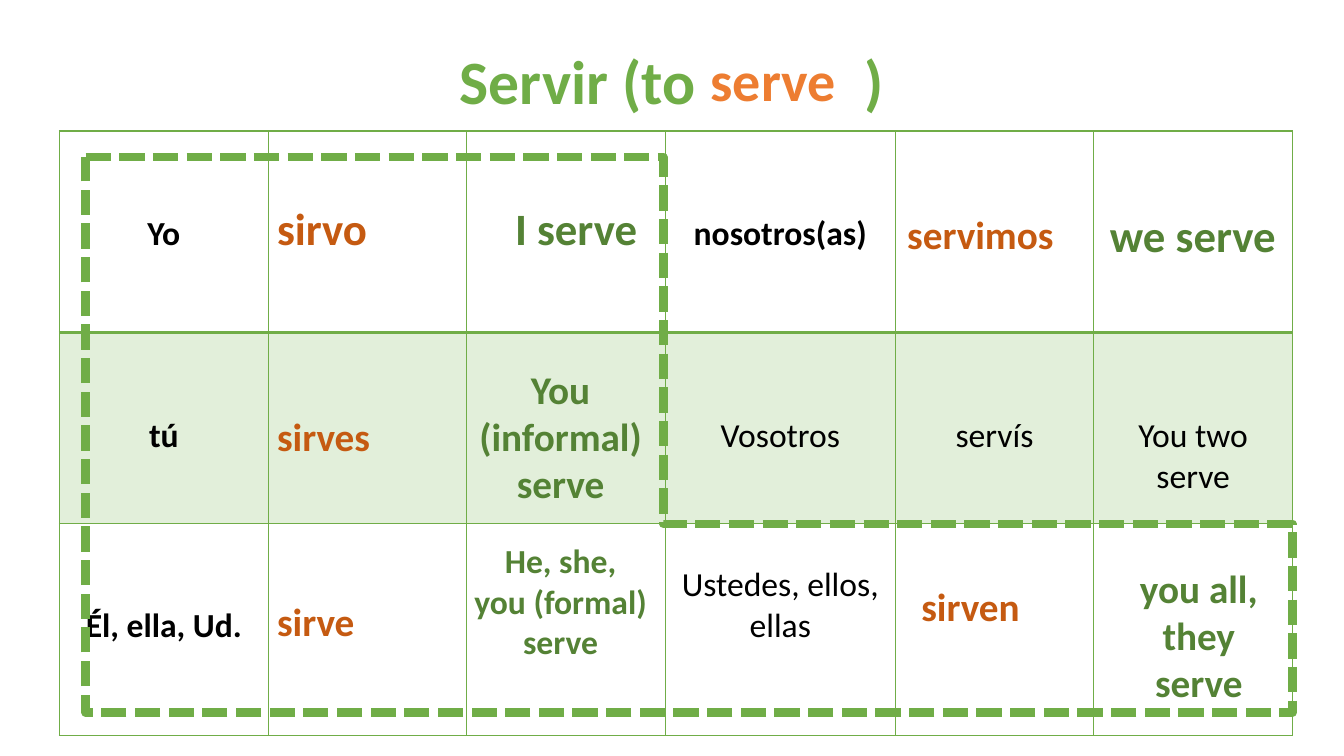
from lxml import etree
from pptx import Presentation
from pptx import util as u
from pptx.dml.color import RGBColor
from pptx.enum import dml, shapes, text
from pptx.oxml.ns import qn

PX = 9144  # EMU, 100 px to the inch
FONT = "Calibri"
GREEN = RGBColor(0x70, 0xAD, 0x47)
PALE = RGBColor(0xE2, 0xEF, 0xDA)
DARK = RGBColor(0x54, 0x82, 0x35)
ORANGE = RGBColor(0xED, 0x7D, 0x31)
RUST = RGBColor(0xC5, 0x5A, 0x11)
BLACK = RGBColor(0, 0, 0)
LEFT, MID = text.PP_ALIGN.LEFT, text.PP_ALIGN.CENTER

COLS = [207, 197, 197, 228, 197, 197]
ROWS = [200, 189, 211]
LINE = 41  # height of one line of 24 pt text

# row, column, words, bold, lines of room above
CELLS = [
    (0, 0, "Yo", True, 2),
    (0, 3, "nosotros(as)", True, 2),
    (1, 0, "tú", True, 2),
    (1, 3, "Vosotros", False, 2),
    (1, 4, "servís", False, 2),
    (1, 5, "You two serve", False, 2),
    (2, 0, "Él, ella, Ud.", True, 2),
    (2, 3, "Ustedes, ellos, ellas", False, 1),
]

# left, top, width, height, paragraphs, size, colour, alignment
LABELS = [
    (695, 40, 372, 77, ["serve"], 40, ORANGE, LEFT),
    (265, 194, 194, 64, ["sirvo"], 32, RUST, LEFT),
    (265, 404, 217, 57, ["sirves"], 28, RUST, LEFT),
    (265, 588, 217, 57, ["sirve"], 28, RUST, LEFT),
    (890, 204, 217, 57, ["servimos"], 28, RUST, LEFT),
    (904, 573, 217, 57, ["sirven"], 28, RUST, LEFT),
    (501, 194, 194, 64, ["I serve"], 32, DARK, LEFT),
    (459, 357, 194, 151, ["You (informal) serve"], 28, DARK, MID),
    (459, 531, 194, 131, ["He, she,", "you (formal)", "serve"], 24, DARK, MID),
    (1091, 201, 194, 64, ["we serve"], 32, DARK, LEFT),
    (1108, 555, 162, 151, ["you all,", "they serve"], 28, DARK, MID),
]


def px(*vals):
    return [u.Emu(v * PX) for v in vals]


def add_run(para, words, size, color, bold=True):
    run = para.add_run()
    run.text = words
    font = run.font
    font.name, font.size, font.bold = FONT, u.Pt(size), bold
    font.color.rgb = color


def add_label(slide, left, top, width, height, lines, size, color, align):
    frame = slide.shapes.add_textbox(*px(left, top, width, height)).text_frame
    frame.word_wrap = True
    frame.auto_size = text.MSO_AUTO_SIZE.SHAPE_TO_FIT_TEXT
    for i, words in enumerate(lines):
        para = frame.add_paragraph() if i else frame.paragraphs[0]
        para.alignment = align
        add_run(para, words, size, color)


def add_title(slide):
    """Title with a tab that leaves a gap for the meaning."""
    frame = slide.shapes.add_textbox(*px(95, 11, 1150, 145)).text_frame
    frame.word_wrap = True
    frame.vertical_anchor = text.MSO_ANCHOR.MIDDLE
    frame.margin_left, = px(361)
    para = frame.paragraphs[0]
    stops = etree.SubElement(para._p.get_or_add_pPr(), qn("a:tabLst"))
    etree.SubElement(stops, qn("a:tab"), pos=str(401 * PX), algn="l")
    para.line_spacing = 0.9
    add_run(para, "Servir (to\t)", 44, GREEN)


def add_border(cell, side, points):
    line = etree.SubElement(cell._tc.get_or_add_tcPr(), qn("a:ln" + side),
                            w=str(u.Pt(points)))
    fill = etree.SubElement(line, qn("a:solidFill"))
    etree.SubElement(fill, qn("a:srgbClr"), val=str(GREEN))


def add_grid(slide):
    frame = slide.shapes.add_table(len(ROWS), len(COLS),
                                   *px(59, 130, sum(COLS), sum(ROWS)))
    table = frame.table
    table.first_row = table.horz_banding = False
    for col, width in zip(table.columns, px(*COLS)):
        col.width = width
    for r, height in enumerate(px(*ROWS)):
        table.rows[r].height = height
        for cell in table.rows[r].cells:
            for side in "LRTB":
                thick = (r, side) in ((0, "B"), (1, "T"))
                add_border(cell, side, 2 if thick else 1)
            if r == 1:
                cell.fill.solid()
                cell.fill.fore_color.rgb = PALE
            else:
                cell.fill.background()
    for r, c, words, bold, room in CELLS:
        cell = table.cell(r, c)
        cell.margin_left, cell.margin_right = px(7, 7)
        cell.margin_top, cell.margin_bottom = px(room * LINE, 0)
        para = cell.text_frame.paragraphs[0]
        para.alignment = MID
        add_run(para, words, 24, BLACK, bold)


def add_boot(slide):
    """Dashed outline around the forms whose stem changes."""
    boot = slide.shapes.add_shape(shapes.MSO_SHAPE.CORNER,
                                  *px(85, 156, 1197, 551))
    boot.adjustments[0], boot.adjustments[1] = 0.34, 1.04
    boot.shadow.inherit = False
    boot.fill.background()
    boot.line.color.rgb = GREEN
    boot.line.width = u.Pt(6)
    boot.line.dash_style = dml.MSO_LINE.SQUARE_DOT


def main():
    deck = Presentation()
    deck.slide_width, deck.slide_height = px(1333, 750)
    slide = deck.slides.add_slide(deck.slide_layouts[6])
    add_title(slide)
    add_grid(slide)
    add_boot(slide)
    for label in LABELS:
        add_label(slide, *label)
    deck.save("out.pptx")


if __name__ == "__main__":
    main()
